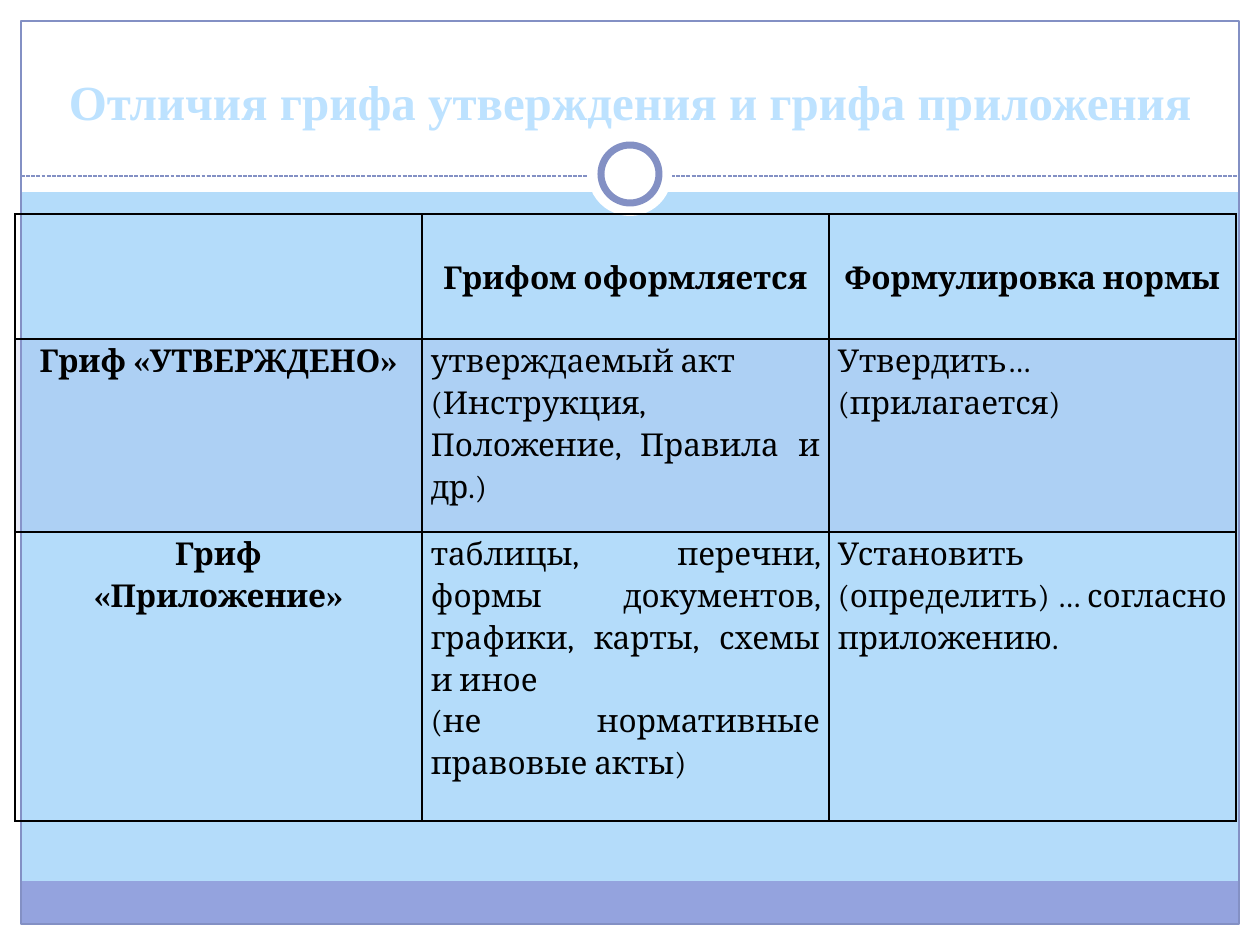
"""Builds a slide with a table contrasting the approval and appendix marks."""
from lxml import etree
from pptx import Presentation
from pptx.dml.color import RGBColor
from pptx.enum.dml import MSO_LINE
from pptx.enum.shapes import MSO_CONNECTOR, MSO_SHAPE
from pptx.enum.text import MSO_ANCHOR as Anchor, PP_ALIGN as Align
from pptx.oxml.ns import qn
from pptx.util import Emu, Pt

SKY = RGBColor(0xB4, 0xDC, 0xFA)
WHITE = RGBColor(0xFF, 0xFF, 0xFF)
BLACK = RGBColor(0, 0, 0)
PERIWINKLE = RGBColor(0x94, 0xA3, 0xDE)
FRAME = RGBColor(0x83, 0x90, 0xC4)
TITLE = RGBColor(0xBD, 0xE2, 0xFF)

WIDTH, HEIGHT = 1260, 945
MARGIN = 21
COLUMN_WIDTH = 407
ROW_HEIGHTS = [125, 193, 289]
ROWS = [
    [[], ["Грифом оформляется"], ["Формулировка нормы"]],
    [["Гриф «УТВЕРЖДЕНО»"],
     ["утверждаемый акт", "(Инструкция, Положение, Правила и др.)"],
     ["Утвердить…(прилагается)"]],
    [["Гриф", "«Приложение»"],
     ["таблицы, перечни, формы документов, графики, карты, схемы и иное",
      "(не нормативные правовые акты)"],
     ["Установить (определить) … согласно приложению."]],
]


def px(length):
    return Emu(round(length * 914400 / 126))


def add_block(slide, kind, box, fill=None, line_width=None):
    block = slide.shapes.add_shape(kind, *map(px, box))
    block.shadow.inherit = False
    if fill is None:
        block.fill.background()
    else:
        block.fill.solid()
        block.fill.fore_color.rgb = fill
    if line_width is None:
        block.line.fill.background()
    else:
        block.line.color.rgb = FRAME
        block.line.width = Pt(line_width)


def add_divider(slide, y):
    divider = slide.shapes.add_connector(
        MSO_CONNECTOR.STRAIGHT, px(MARGIN), px(y), px(WIDTH - MARGIN), px(y))
    divider.line.color.rgb = FRAME
    divider.line.width = Pt(0.75)
    divider.line.dash_style = MSO_LINE.SQUARE_DOT
    etree.SubElement(divider.element.spPr, qn("a:effectLst"))


def add_frame(slide):
    bands = [
        (0, HEIGHT - MARGIN, WIDTH, MARGIN),
        (0, 0, WIDTH, 192),
        (0, 0, MARGIN, HEIGHT),
        (WIDTH - MARGIN, 0, MARGIN, HEIGHT),
    ]
    for band in bands:
        add_block(slide, MSO_SHAPE.RECTANGLE, band, WHITE)
    inner_width = WIDTH - 2 * MARGIN
    add_block(slide, MSO_SHAPE.RECTANGLE, (MARGIN, 881, inner_width, 43), PERIWINKLE)
    add_block(slide, MSO_SHAPE.RECTANGLE,
              (MARGIN, MARGIN, inner_width, HEIGHT - 2 * MARGIN), line_width=0.75)
    add_divider(slide, 176)
    add_block(slide, MSO_SHAPE.OVAL, (588, 132, 84, 84), WHITE)
    add_block(slide, MSO_SHAPE.OVAL, (601, 145, 58, 58), WHITE, 4)


def add_title(slide, text):
    frame = slide.shapes.add_textbox(px(42), px(32), px(1176), px(105)).text_frame
    frame.word_wrap = True
    frame.vertical_anchor = Anchor.BOTTOM
    heading = frame.paragraphs[0]
    heading.text = text
    heading.alignment = Align.CENTER
    style_font(heading.font, "Times New Roman", 28, TITLE, True)


def style_font(font, name, size, color, bold):
    font.name = name
    font.size = Pt(size)
    font.color.rgb = color
    font.bold = bold


def set_borders(cell):
    properties = cell._tc.get_or_add_tcPr()
    for position, side in enumerate(("lnL", "lnR", "lnT", "lnB")):
        border = etree.Element(qn(f"a:{side}"), w=str(Pt(1)))
        fill = etree.SubElement(border, qn("a:solidFill"))
        etree.SubElement(fill, qn("a:srgbClr"), val=str(BLACK))
        properties.insert(position, border)


def tint(cell, color, percent):
    cell.fill.solid()
    cell.fill.fore_color.rgb = color
    swatch = cell._tc.tcPr.find(f".//{qn('a:srgbClr')}")
    etree.SubElement(swatch, qn("a:alpha"), val=str(percent * 1000))


def fill_cell(cell, lines, is_label):
    cell.margin_left = cell.margin_right = px(9)
    cell.margin_top = cell.margin_bottom = 0
    cell.text = "\n".join(lines)
    for paragraph in cell.text_frame.paragraphs:
        paragraph.alignment = Align.CENTER if is_label else Align.JUSTIFY
        paragraph.line_spacing = 1.15
        style_font(paragraph.font, "Cambria", 18, BLACK, is_label)


def add_comparison(slide):
    columns = len(ROWS[0])
    table = slide.shapes.add_table(
        len(ROWS), columns, px(15), px(214),
        px(COLUMN_WIDTH * columns), px(sum(ROW_HEIGHTS))).table
    table.first_row = table.horz_banding = False
    for column in table.columns:
        column.width = px(COLUMN_WIDTH)
    for r, (height, contents) in enumerate(zip(ROW_HEIGHTS, ROWS)):
        table.rows[r].height = px(height)
        for c, lines in enumerate(contents):
            cell = table.cell(r, c)
            fill_cell(cell, lines, r == 0 or c == 0)
            cell.vertical_anchor = Anchor.MIDDLE if r == 0 else Anchor.TOP
            if r == 1:
                tint(cell, PERIWINKLE, 20)
            else:
                cell.fill.background()
            set_borders(cell)


def main():
    deck = Presentation()
    deck.slide_width, deck.slide_height = px(WIDTH), px(HEIGHT)
    slide = deck.slides.add_slide(deck.slide_layouts[6])
    slide.background.fill.solid()
    slide.background.fill.fore_color.rgb = SKY
    add_frame(slide)
    add_title(slide, "Отличия грифа утверждения и грифа приложения")
    add_comparison(slide)
    deck.save("out.pptx")


if __name__ == "__main__":
    main()
